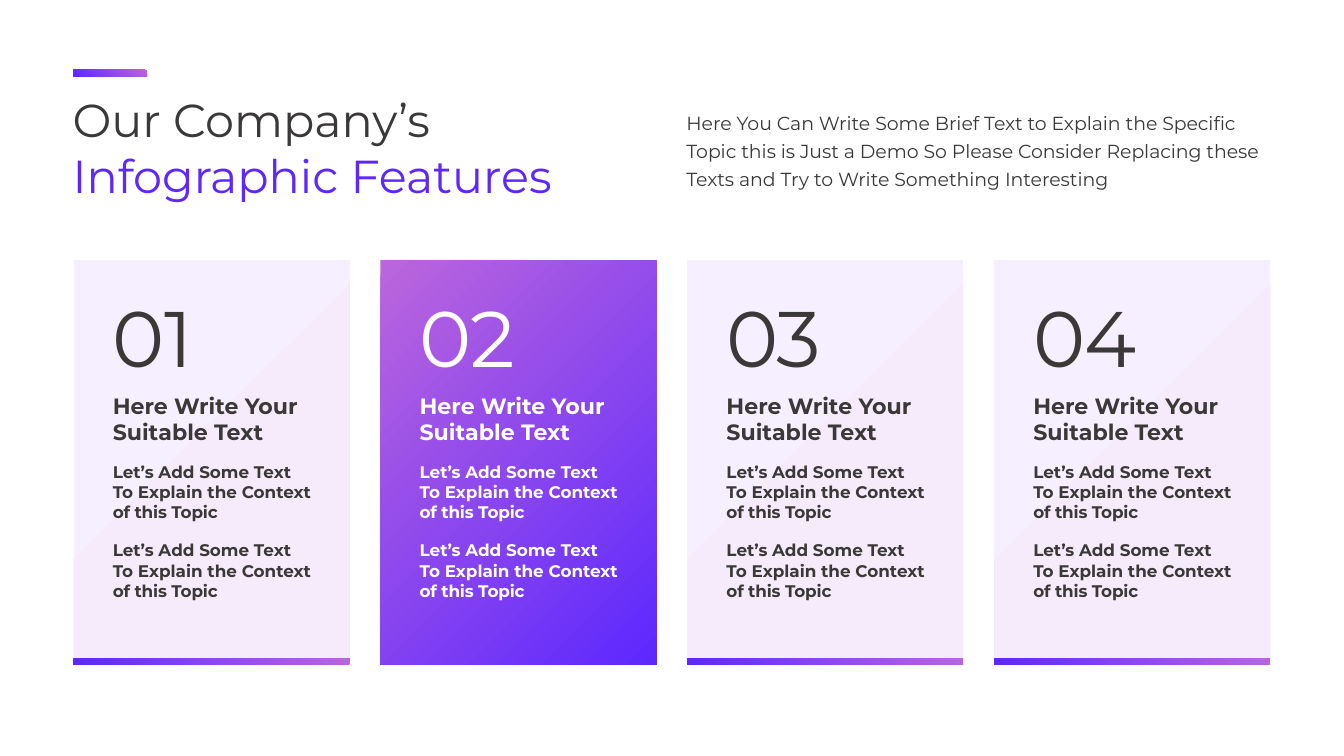
import dataclasses

import lxml.etree
import pptx
import pptx.dml.color
import pptx.enum.shapes
import pptx.enum.text
import pptx.oxml.ns
import pptx.util

Inches = pptx.util.Inches


@dataclasses.dataclass(frozen=True)
class Theme:
    font: str = "Montserrat"
    dark: str = "3B3838"
    white: str = "FFFFFF"
    vivid: tuple = ((0, "5D28FE"), (1, "BB66DD"))
    pale: tuple = ((0.12, "F6EBFB"), (1, "F6EFFF"))
    title: float = 33
    intro: float = 13.5
    digit: float = 56.2
    head: float = 15.8
    body: float = 12


def rgb(code):
    return pptx.dml.color.RGBColor.from_string(code)


class Deck:
    """Holds the theme and the current slide and draws its elements."""

    def __init__(self, theme):
        self.theme = theme
        self.file = pptx.Presentation()
        self.file.slide_width = Inches(13.33)
        self.file.slide_height = Inches(7.5)
        self.slide = self.file.slides.add_slide(self.file.slide_layouts[5])

    def blend(self, fill, stops):
        fill.gradient()
        for stop, (place, code) in zip(fill.gradient_stops, stops):
            stop.position = place
            stop.color.rgb = rgb(code)

    def panel(self, left, top, width, height, stops, focus):
        kind = pptx.enum.shapes.MSO_SHAPE.RECTANGLE
        shape = self.slide.shapes.add_shape(
            kind, Inches(left), Inches(top), Inches(width), Inches(height))
        shape.shadow.inherit = False
        shape.line.fill.background()
        self.blend(shape.fill, stops)
        qn = pptx.oxml.ns.qn
        grad = shape.element.spPr.find(qn("a:gradFill"))
        grad.remove(grad.find(qn("a:lin")))
        route = lxml.etree.SubElement(grad, qn("a:path"), path="circle")
        edges = {side: str(value * 1000) for side, value in zip("ltrb", focus)}
        lxml.etree.SubElement(route, qn("a:fillToRect"), edges)

    def bar(self, left, top, width, height):
        self.panel(left, top, width, height, self.theme.vivid, (0, 100, 100, 0))

    def style(self, frame, text, size, color, bold=False, wrap=False):
        frame.text = text
        frame.word_wrap = wrap
        frame.auto_size = pptx.enum.text.MSO_AUTO_SIZE.SHAPE_TO_FIT_TEXT
        frame.vertical_anchor = pptx.enum.text.MSO_ANCHOR.TOP
        for line in frame.paragraphs:
            line.alignment = pptx.enum.text.PP_ALIGN.LEFT
            for run in line.runs:
                run.font.name = self.theme.font
                run.font.size = pptx.util.Pt(size)
                run.font.bold = bold
                run.font.color.rgb = rgb(color)

    def label(self, left, top, width, height, text, size, color,
              bold=False, wrap=False):
        box = self.slide.shapes.add_textbox(
            Inches(left), Inches(top), Inches(width), Inches(height))
        self.style(box.text_frame, text, size, color, bold, wrap)
        return box.text_frame.paragraphs

    def track(self, line, points):
        for run in line.runs:
            run.font._element.set("spc", str(round(points * 100)))

    def title(self, left, top, width, height, text):
        shape = self.slide.shapes.title
        shape.left, shape.top = Inches(left), Inches(top)
        shape.width, shape.height = Inches(width), Inches(height)
        self.style(shape.text_frame, text, self.theme.title, self.theme.dark)
        fill = shape.text_frame.paragraphs[1].runs[0].font.fill
        self.blend(fill, self.theme.vivid)
        fill.gradient_angle = 180

    def intro(self, left, top, width, height, text):
        lines = self.label(left, top, width, height, text,
                           self.theme.intro, self.theme.dark, wrap=True)
        lines[0].line_spacing = pptx.util.Pt(20)

    def card(self, left, digit, span, strong):
        theme = self.theme
        color = theme.white if strong else theme.dark
        stops = theme.vivid if strong else theme.pale
        self.panel(left, 2.58, 2.74, 4.01, stops, (100, 100, 0, 0))
        inner = left + 0.29
        self.label(inner, 3.84, 2.08, 0.63, "Here Write Your\nSuitable Text",
                   theme.head, color, bold=True)
        lines = self.label(inner, 2.82, span, 1.05, digit, theme.digit, color)
        self.track(lines[0], -0.6)
        for top in (4.53, 5.31):
            lines = self.label(
                inner, top, 2.21, 0.71,
                "Let’s Add Some Text\nTo Explain the Context\nof this Topic",
                theme.body, color, bold=True)
            self.track(lines[2], -0.1)
        if not strong:
            self.bar(left, 6.53, 2.74, 0.06)


def main():
    deck = Deck(Theme())
    deck.title(0.62, 0.86, 5.37, 1.21, "Our Company’s\nInfographic Features")
    deck.bar(0.73, 0.69, 0.73, 0.07)
    deck.intro(6.71, 1, 6.12, 0.92,
               "Here You Can Write Some Brief Text to Explain the Specific "
               "Topic this is Just a Demo So Please Consider Replacing these "
               "Texts and Try to Write Something Interesting")
    first, last = 0.73, 9.86
    cards = (("01", 1.05), ("02", 1.2), ("03", 1.2), ("04", 1.27))
    pitch = (last - first) / (len(cards) - 1)
    for index, (digit, span) in enumerate(cards):
        deck.card(first + index * pitch, digit, span, strong=digit == "02")
    deck.file.save("out.pptx")


if __name__ == "__main__":
    main()
